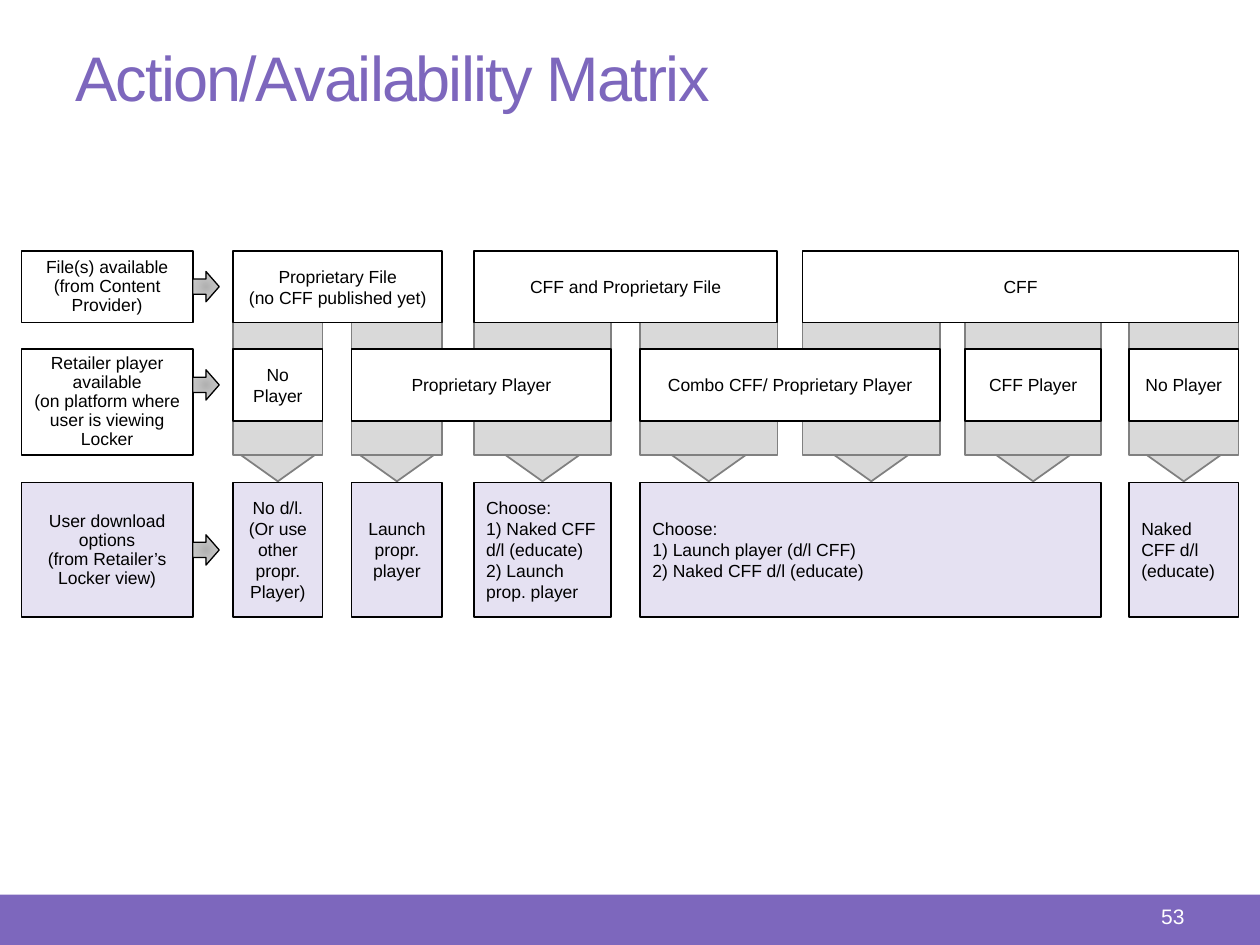
from lxml.etree import SubElement
from pptx import Presentation
from pptx.dml.color import RGBColor as RGB
from pptx.enum.shapes import MSO_SHAPE as Kind
from pptx.enum.text import MSO_ANCHOR as Anchor, PP_ALIGN as Align
from pptx.oxml.ns import qn
from pptx.util import Inches, Pt

PURPLE = RGB(0x7D, 0x67, 0xBD)
LILAC = RGB(0xE5, 0xE1, 0xF2)
GREY = RGB(0xD9, 0xD9, 0xD9)
EDGE = RGB(0x80, 0x80, 0x80)
BLACK = RGB(0, 0, 0)
WHITE = RGB(255, 255, 255)
GLOW = [(0, "B1B1B1"), (45, "C0C0C0"), (100, "DDDDDD")]

COLS = [(0.17, 1.36), (1.85, 0.71), (2.79, 0.72), (3.76, 1.09),
        (5.08, 1.09), (6.37, 1.09), (7.66, 1.08), (8.96, 0.87)]
FILE, PLAYER, OPTION = (1.99, 0.57), (2.77, 0.57), (3.83, 1.07)
BAND = (2.56, 1.05)
TIP = (0.59, 0.21)
ARROW = (0.21, 0.24)

LABELS = [
    (FILE, 0.57, WHITE, "File(s) available (from Content Provider)"),
    (PLAYER, 0.84, WHITE, "Retailer player available\v(on platform where user is viewing Locker"),
    (OPTION, 1.07, LILAC, "User download options\v(from Retailer’s Locker view)"),
]
CELLS = [
    (FILE, 1, 2, "Proprietary File\v(no CFF published yet)"),
    (FILE, 3, 4, "CFF and Proprietary File"),
    (FILE, 5, 7, "CFF"),
    (PLAYER, 1, 1, "No Player"),
    (PLAYER, 2, 3, "Proprietary Player"),
    (PLAYER, 4, 5, "Combo CFF/ Proprietary Player"),
    (PLAYER, 6, 6, "CFF Player"),
    (PLAYER, 7, 7, "No Player"),
    (OPTION, 1, 1, "No d/l. (Or use other propr. Player)"),
    (OPTION, 2, 2, "Launch propr. player"),
    (OPTION, 3, 3, "Choose:\n1) Naked CFF d/l (educate)\n2) Launch prop. player"),
    (OPTION, 4, 6, "Choose:\n1) Launch player (d/l CFF)\n2) Naked CFF d/l (educate)"),
    (OPTION, 7, 7, "Naked CFF d/l (educate)"),
]


class Board:
    base = {"name": "Arial", "size": Pt(10)}

    def __init__(self, deck):
        self.slide = deck.slides.add_slide(deck.slide_layouts[6])

    def shape(self, kind, box, fill=None, line=None, width=1):
        item = self.slide.shapes.add_shape(kind, *map(Inches, box))
        item.shadow.inherit = False
        if fill is not None:
            item.fill.solid()
            item.fill.fore_color.rgb = fill
        if line is None:
            item.line.fill.background()
        else:
            item.line.color.rgb = line
            item.line.width = Pt(width)
        return item

    def letter(self, item, text, align, color=BLACK, anchor=Anchor.MIDDLE, space=None, **style):
        frame = item.text_frame
        for key, value in {"word_wrap": True, "vertical_anchor": anchor, "text": text}.items():
            setattr(frame, key, value)
        for para in frame.paragraphs:
            para.alignment = align
            para.line_spacing = space
            for run in para.runs:
                for key, value in {**self.base, **style}.items():
                    setattr(run.font, key, value)
                run.font.color.rgb = color

    def text(self, box, text, align, color, **style):
        item = self.slide.shapes.add_textbox(*map(Inches, box))
        self.letter(item, text, align, color, **style)
        return item

    def cell(self, row, first, last, text):
        left, top = COLS[first][0], row[0]
        wide = sum(COLS[last]) - left
        fill = LILAC if row == OPTION else WHITE
        item = self.shape(Kind.RECTANGLE, (left, top, wide, row[1]), fill, BLACK)
        listed = row == OPTION and first > 2
        self.letter(item, text, Align.LEFT if listed else Align.CENTER)

    def label(self, row, high, fill, text):
        left, wide = COLS[0]
        item = self.shape(Kind.RECTANGLE, (left, row[0], wide, high), fill, BLACK)
        self.letter(item, text, Align.CENTER, space=0.9)
        mid = row[0] + row[1] / 2
        self.arrow(left + wide, mid)

    def arrow(self, left, mid):
        wide, high = ARROW
        item = self.shape(Kind.RIGHT_ARROW, (left, mid - high / 2, wide, high), None, BLACK, 0.75)
        item.fill.gradient()
        grad = item._element.spPr.find(qn("a:gradFill"))
        for part in list(grad):
            grad.remove(part)
        stops = SubElement(grad, qn("a:gsLst"))
        for spot, color in GLOW:
            stop = SubElement(stops, qn("a:gs"), pos=str(spot * 1000))
            SubElement(stop, qn("a:srgbClr"), val=color)
        ring = SubElement(grad, qn("a:path"), {"path": "circle"})
        SubElement(ring, qn("a:fillToRect"), dict.fromkeys("ltrb", "100000"))

    def flow(self, left, wide):
        top, high = BAND
        tip = (left + (wide - TIP[0]) / 2, top + high, *TIP)
        self.shape(Kind.ISOSCELES_TRIANGLE, tip, GREY, EDGE).rotation = 180
        self.shape(Kind.RECTANGLE, (left, top, wide, high), GREY, EDGE)


def main():
    deck = Presentation()
    deck.slide_width, deck.slide_height = Inches(10), Inches(7.5)
    board = Board(deck)
    board.shape(Kind.RECTANGLE, (0, 7.1, 10, 0.4), PURPLE)
    title = board.text((0.5, 0.25, 9, 0.71), "Action/Availability Matrix", Align.LEFT, PURPLE, size=Pt(36))
    title.text_frame.paragraphs[0].runs[0].font._element.set("spc", "-100")
    board.text((8.33, 7.12, 1.17, 0.36), "53", Align.RIGHT, WHITE, anchor=Anchor.TOP, size=Pt(12))
    for col in COLS[1:]:
        board.flow(*col)
    for label in LABELS:
        board.label(*label)
    for cell in CELLS:
        board.cell(*cell)
    deck.save("out.pptx")


if __name__ == "__main__":
    main()
